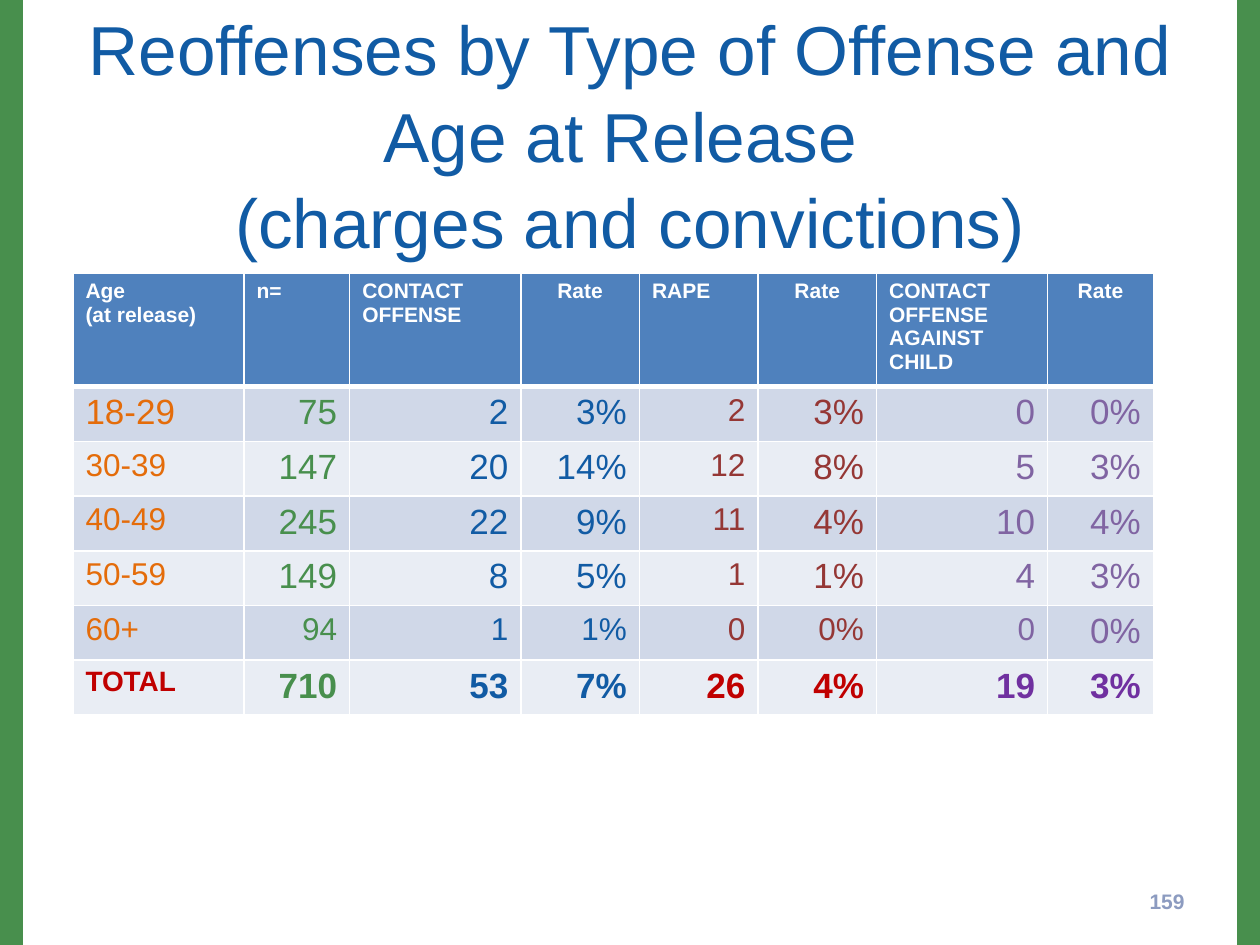
"""Build a slide with a table of reoffense rates by offense type and age at release."""
import pptx
import pptx.dml.color
import pptx.enum.shapes
import pptx.enum.text
import pptx.oxml
import pptx.oxml.ns
import pptx.util

Cm = pptx.util.Cm
Pt = pptx.util.Pt
RGBColor = pptx.dml.color.RGBColor
ALIGN = pptx.enum.text.PP_ALIGN
MIDDLE = pptx.enum.text.MSO_ANCHOR.MIDDLE

WHITE = RGBColor(0xFF, 0xFF, 0xFF)
GREEN = RGBColor(0x48, 0x8F, 0x4D)
BLUE = RGBColor(0x11, 0x5B, 0xA4)
HEADER = RGBColor(0x4F, 0x81, 0xBD)
BAND_DARK = RGBColor(0xD0, 0xD8, 0xE8)
BAND_LIGHT = RGBColor(0xE9, 0xED, 0xF4)
ORANGE = RGBColor(0xE4, 0x6C, 0x0A)
MAROON = RGBColor(0x95, 0x37, 0x35)
LILAC = RGBColor(0x80, 0x64, 0xA2)
RED = RGBColor(0xC0, 0x00, 0x00)
PURPLE = RGBColor(0x70, 0x30, 0xA0)
GREY_BLUE = RGBColor(0x8C, 0x9B, 0xC0)


def write(tf, text, align, color, size, bold=False):
    tf.text = text
    for p in tf.paragraphs:
        p.alignment = align
        for r in p.runs:
            r.font.color.rgb = color
            for name, value in {"name": "Arial", "size": Pt(size), "bold": bold}.items():
                setattr(r.font, name, value)


def add_borders(cell, widths):
    tcPr = cell._tc.get_or_add_tcPr()
    for i, (side, width) in enumerate(widths.items()):
        tcPr.insert(i, pptx.oxml.parse_xml(
            f'<a:ln{side} {pptx.oxml.ns.nsdecls("a")} w="{Pt(width)}">'
            f'<a:solidFill><a:srgbClr val="{WHITE}"/></a:solidFill></a:ln{side}>'))


prs = pptx.Presentation()
prs.slide_width, prs.slide_height = Cm(25.4), Cm(19.05)
s = prs.slides.add_slide(prs.slide_layouts[6])

for left in (24.97, 0):
    sp = s.shapes.add_shape(pptx.enum.shapes.MSO_SHAPE.RECTANGLE,
                            Cm(left), 0, Cm(0.43), prs.slide_height)
    sp.shadow.inherit = False
    sp.fill.solid()
    sp.fill.fore_color.rgb = GREEN
    sp.line.color.rgb = GREEN
    sp.line.width = Pt(2)

tf = s.shapes.add_textbox(Cm(1.27), Cm(0.76), Cm(22.86), Cm(3.18)).text_frame
for name, value in {"word_wrap": True, "vertical_anchor": MIDDLE,
                    "margin_top": Cm(0.66), "margin_bottom": 0}.items():
    setattr(tf, name, value)
write(tf, "Reoffenses by Type of Offense and Age at Release \v(charges and convictions)",
      ALIGN.CENTER, BLUE, 39.6)
tf.paragraphs[0].line_spacing = 1.04

rows = [
    ["Age\n(at release)", "n=", "CONTACT OFFENSE", "Rate", "RAPE", "Rate",
     "CONTACT OFFENSE AGAINST CHILD", "Rate"],
    ["18-29", "75", "2", "3%", "2", "3%", "0", "0%"],
    ["30-39", "147", "20", "14%", "12", "8%", "5", "3%"],
    ["40-49", "245", "22", "9%", "11", "4%", "10", "4%"],
    ["50-59", "149", "8", "5%", "1", "1%", "4", "3%"],
    ["60+", "94", "1", "1%", "0", "0%", "0", "0%"],
    ["TOTAL", "710", "53", "7%", "26", "4%", "19", "3%"],
]
col_widths = [3.45, 2.13, 3.45, 2.39, 2.39, 2.39, 3.45, 2.13]
row_heights = [2.13] + [1.045] * 6
body_colors = [ORANGE, GREEN, BLUE, BLUE, MAROON, MAROON, LILAC, LILAC]
total_colors = [RED, GREEN, BLUE, BLUE, RED, RED, PURPLE, PURPLE]
body_sizes = [18, 20, 20, 20, 18, 20, 20, 20]
row_sizes = {0: [12] * 8, 1: [20] * 4 + [18] + [20] * 3,
             5: [18] * 7 + [20], 6: [16] + [20] * 7}

table = s.shapes.add_table(len(rows), len(col_widths), Cm(1.47), Cm(5.51),
                           Cm(sum(col_widths)), Cm(sum(row_heights))).table
for column, width in zip(table.columns, col_widths):
    column.width = Cm(width)
for row, height in zip(table.rows, row_heights):
    row.height = Cm(height)

for i, row in enumerate(rows):
    colors = {0: [WHITE] * 8, 6: total_colors}.get(i, body_colors)
    fill = HEADER if i == 0 else BAND_DARK if i % 2 else BAND_LIGHT
    for j, text in enumerate(row):
        cell = table.cell(i, j)
        if i == 0:
            align = ALIGN.CENTER if text == "Rate" else ALIGN.LEFT
        else:
            align = ALIGN.RIGHT if j else ALIGN.LEFT
        write(cell.text_frame, text, align, colors[j],
              row_sizes.get(i, body_sizes)[j], i in (0, 6))
        cell.fill.solid()
        cell.fill.fore_color.rgb = fill
        add_borders(cell, {"L": 1, "R": 1, "T": 3 if i == 1 else 1, "B": 3 if i == 0 else 1})

tf = s.shapes.add_textbox(Cm(18.2), Cm(17.65), Cm(5.93), Cm(1.02)).text_frame
tf.word_wrap = True
tf.vertical_anchor = MIDDLE
write(tf, "159", ALIGN.RIGHT, GREY_BLUE, 12, True)

prs.save("out.pptx")
